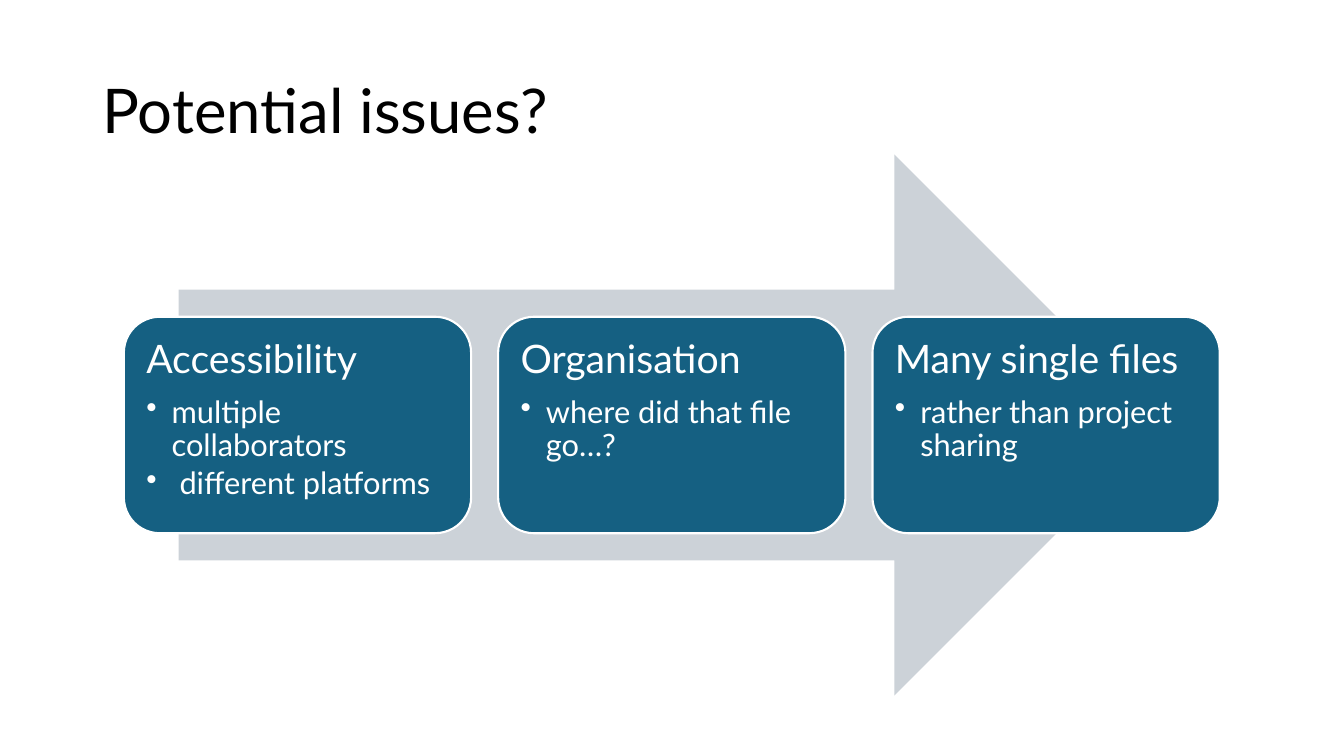
from pptx import Presentation
from pptx.dml.color import RGBColor
from pptx.enum.shapes import MSO_SHAPE
from pptx.enum.text import MSO_ANCHOR, PP_ALIGN
from pptx.oxml.ns import qn
from pptx.util import Cm, Pt
from lxml.etree import SubElement

BLACK = RGBColor(0x00, 0x00, 0x00)
WHITE = RGBColor(0xFF, 0xFF, 0xFF)
GREY = RGBColor(0xCC, 0xD2, 0xD8)
TEAL = RGBColor(0x15, 0x60, 0x82)
FONT = "Lato"

ISSUES = [
    ("Accessibility", ["multiple collaborators", " different platforms"]),
    ("Organisation", ["where did that file go…?"]),
    ("Many single files", ["rather than project sharing"]),
]


def style(para, size, color, after=0):
    para.alignment = PP_ALIGN.LEFT
    para.line_spacing = 0.9
    para.space_after = Pt(after)
    para.font.name = FONT
    para.font.size = Pt(size)
    para.font.color.rgb = color


def add_bullet(para):
    props = para._p.get_or_add_pPr()
    props.set("marL", str(Cm(0.64)))
    props.set("indent", str(-Cm(0.64)))
    SubElement(props, qn("a:buChar"), char="•")


def add_block(slide, kind, box, fill):
    shape = slide.shapes.add_shape(kind, *map(Cm, box))
    shape.shadow.inherit = False
    shape.fill.solid()
    shape.fill.fore_color.rgb = fill
    shape.line.fill.background()
    return shape


def add_title(slide, box, text):
    frame = slide.shapes.add_textbox(*map(Cm, box)).text_frame
    frame.word_wrap = True
    frame.vertical_anchor = MSO_ANCHOR.MIDDLE
    para = frame.paragraphs[0]
    para.text = text
    style(para, 44, BLACK)


def add_card(slide, box, head, points):
    card = add_block(slide, MSO_SHAPE.ROUNDED_RECTANGLE, box, TEAL)
    card.line.color.rgb = WHITE
    card.line.width = Pt(1.5)
    frame = card.text_frame
    frame.word_wrap = True
    frame.vertical_anchor = MSO_ANCHOR.TOP
    frame.margin_left = frame.margin_right = Cm(0.3)
    frame.margin_top = frame.margin_bottom = Cm(0.3)
    para = frame.paragraphs[0]
    para.text = head
    style(para, 28, WHITE, 11)
    for point in points:
        para = frame.add_paragraph()
        para.text = point
        add_bullet(para)
        style(para, 22, WHITE, 3.5)


def add_process(slide, box):
    """Draw the arrow and, across its middle, one card per issue."""
    left, top, width, height = box
    inset = width * 0.05
    add_block(slide, MSO_SHAPE.RIGHT_ARROW,
              (left + inset, top, width - 2 * inset, height), GREY)
    gap = 0.68
    count = len(ISSUES)
    wide = (width - gap * (count - 1)) / count
    tall = height * 0.4
    for i, (head, points) in enumerate(ISSUES):
        spot = (left + i * (wide + gap), top + height * 0.3, wide, tall)
        add_card(slide, spot, head, points)


def main():
    deck = Presentation()
    deck.slide_width, deck.slide_height = Cm(33.87), Cm(19.05)
    slide = deck.slides.add_slide(deck.slide_layouts[6])
    add_title(slide, (2.33, 1.01, 29.21, 3.68), "Potential issues?")
    add_process(slide, (3.12, 3.89, 27.62, 13.64))
    deck.save("out.pptx")


if __name__ == "__main__":
    main()
